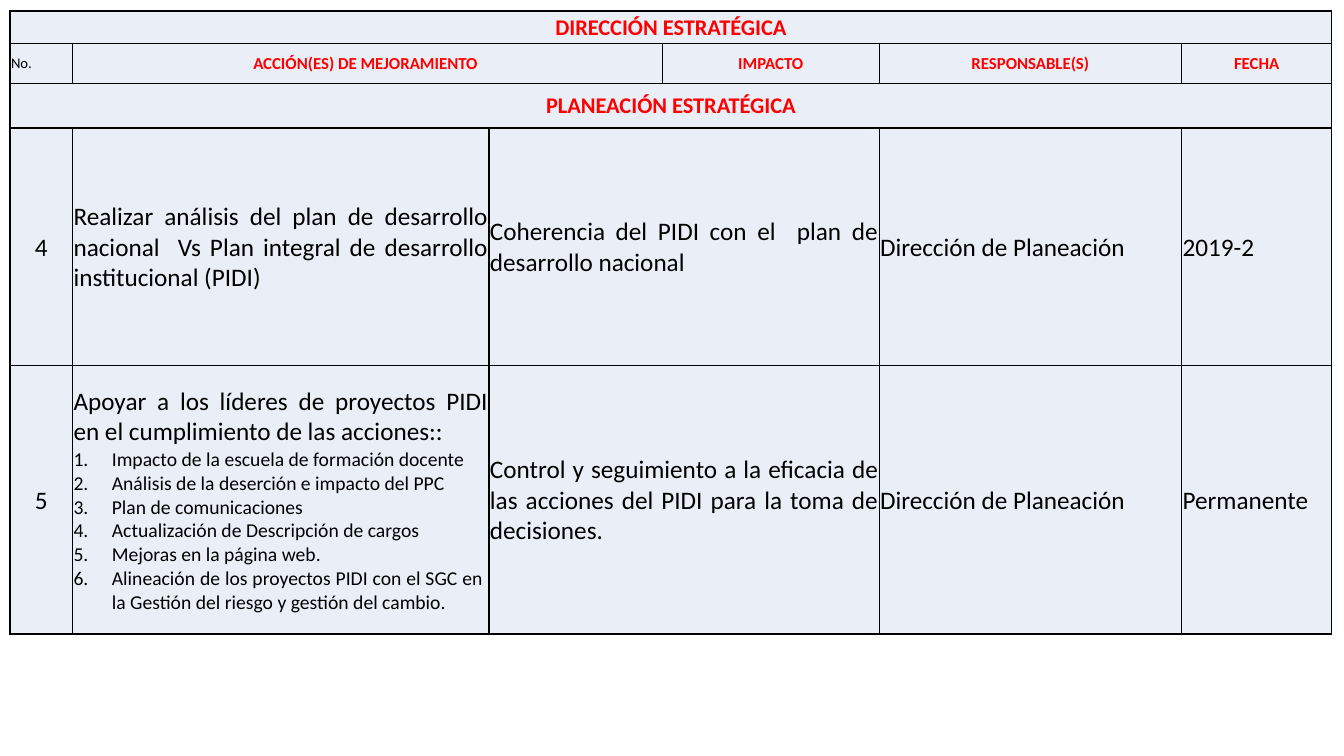
from lxml.etree import SubElement
from pptx import Presentation
from pptx.dml.color import RGBColor
from pptx.enum.text import MSO_ANCHOR, PP_ALIGN
from pptx.oxml.ns import qn
from pptx.util import Inches, Pt

RED, BLACK, PALE_BLUE = "FF0000", "000000", "EAEFF7"
COLUMN_WIDTHS = [0.62, 4.13, 1.72, 2.15, 3, 1.49]
ROW_HEIGHTS = [0.32, 0.4, 0.44, 2.36, 2.66]
LIST_INDENT = Inches(0.38)

# Each row holds (first column, last column, text)
ROWS = [
    [(0, 5, "DIRECCIÓN ESTRATÉGICA")],
    [(0, 0, "No."), (1, 2, "ACCIÓN(ES) DE MEJORAMIENTO "), (3, 3, "IMPACTO"),
     (4, 4, "RESPONSABLE(S)"), (5, 5, "FECHA")],
    [(0, 5, "PLANEACIÓN ESTRATÉGICA")],
    [(0, 0, "4"),
     (1, 1, "Realizar análisis del plan de desarrollo nacional  Vs Plan integral "
            "de desarrollo institucional (PIDI)"),
     (2, 3, "Coherencia del PIDI con el  plan de desarrollo nacional "),
     (4, 4, "Dirección de Planeación"), (5, 5, "2019-2")],
    [(0, 0, "5"),
     (1, 1, "Apoyar a los líderes de proyectos PIDI en el cumplimiento de las acciones::"),
     (2, 3, "Control y seguimiento a la eficacia de las acciones del PIDI "
            "para la toma de decisiones."),
     (4, 4, "Dirección de Planeación"), (5, 5, "Permanente")],
]
PROJECT_ACTIONS = [
    "Impacto de la escuela de formación docente",
    "Análisis de la deserción e impacto del PPC",
    "Plan de comunicaciones",
    "Actualización de Descripción de cargos",
    "Mejoras en la página web.",
    "Alineación de los proyectos PIDI con el SGC en  la Gestión del riesgo "
    "y gestión del cambio.",
]


def rgb(value):
    return RGBColor.from_string(value)


def write(para, text, size, align, color=BLACK, bold=False):
    para.alignment = align
    span = para.add_run()
    span.text = text
    span.font.name = "Calibri"
    span.font.size = Pt(size)
    span.font.bold = bold
    span.font.color.rgb = rgb(color)


deck = Presentation()
deck.slide_width, deck.slide_height = Inches(13.33), Inches(7.5)
page = deck.slides.add_slide(deck.slide_layouts[6])

plan = page.shapes.add_table(
    len(ROW_HEIGHTS), len(COLUMN_WIDTHS), Inches(0.1), Inches(0.11),
    Inches(sum(COLUMN_WIDTHS)), Inches(sum(ROW_HEIGHTS))).table
plan.first_row = plan.horz_banding = False
for column, width in zip(plan.columns, COLUMN_WIDTHS):
    column.width = Inches(width)
for row, height in zip(plan.rows, ROW_HEIGHTS):
    row.height = Inches(height)

for cell in plan.iter_cells():
    cell.margin_left = cell.margin_right = cell.margin_top = Inches(0.01)
    cell.margin_bottom = 0
    cell.vertical_anchor = MSO_ANCHOR.MIDDLE
    properties = cell._tc.get_or_add_tcPr()
    for side in ("a:lnL", "a:lnR", "a:lnT", "a:lnB"):
        border = SubElement(properties, qn(side), w=str(Pt(1)))
        SubElement(SubElement(border, qn("a:solidFill")), qn("a:srgbClr"), val=BLACK)
    cell.fill.solid()
    cell.fill.fore_color.rgb = rgb(PALE_BLUE)

for row_index, entries in enumerate(ROWS):
    for first, last, text in entries:
        cell = plan.cell(row_index, first)
        if last > first:
            cell.merge(plan.cell(row_index, last))
        para = cell.text_frame.paragraphs[0]
        if text == "No.":
            write(para, text, 10.5, PP_ALIGN.JUSTIFY)
        elif row_index < 3:
            write(para, text, 12 if row_index == 1 else 16, PP_ALIGN.CENTER, RED, True)
        else:
            write(para, text, 18, PP_ALIGN.JUSTIFY if first else PP_ALIGN.CENTER)

actions_frame = plan.cell(4, 1).text_frame
for action in PROJECT_ACTIONS:
    para = actions_frame.add_paragraph()
    properties = para._p.get_or_add_pPr()
    properties.set("marL", str(LIST_INDENT))
    properties.set("indent", str(-LIST_INDENT))
    SubElement(properties, qn("a:buFont"), typeface="+mj-lt")
    SubElement(properties, qn("a:buAutoNum"), type="arabicPeriod")
    write(para, action, 14, PP_ALIGN.JUSTIFY)

deck.save("out.pptx")
